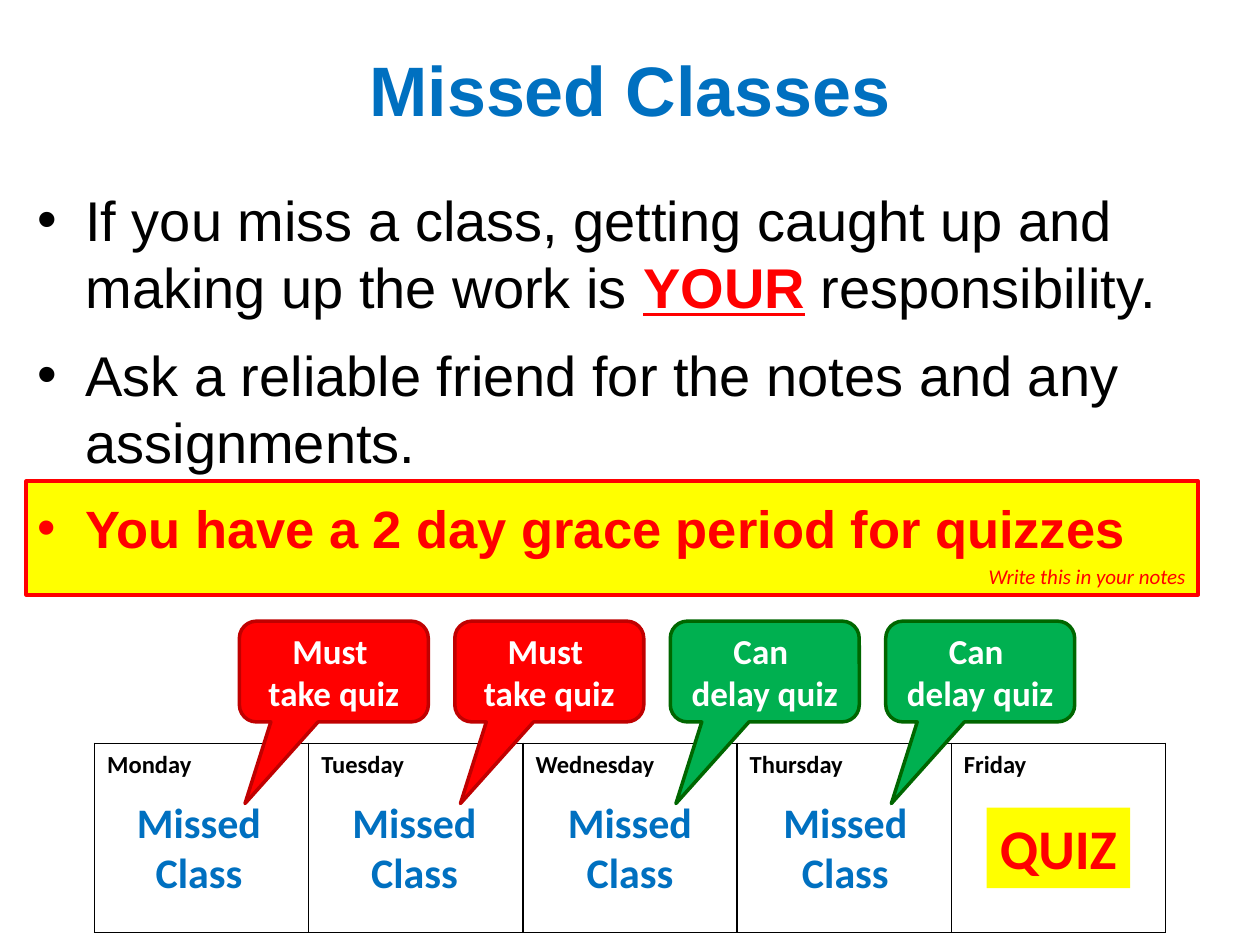
from lxml.etree import SubElement
from pptx import Presentation
from pptx.dml.color import RGBColor
from pptx.enum.shapes import MSO_SHAPE
from pptx.enum.text import MSO_ANCHOR, MSO_AUTO_SIZE, PP_ALIGN
from pptx.oxml import parse_xml
from pptx.oxml.ns import nsdecls, qn
from pptx.util import Inches, Pt

COLORS = {
    "black": "000000", "white": "FFFFFF", "blue": "0070C0", "yellow": "FFFF00",
    "red": "FF0000", "dark red": "C00000", "green": "00B050", "dark green": "006600",
}


def color(name):
    return RGBColor.from_string(COLORS[name])


def add_run(para, text, size, tint, font="Calibri", bold=True):
    span = para.add_run()
    span.text = text
    span.font.name = font
    span.font.size = Pt(size)
    span.font.bold = bold
    span.font.color.rgb = color(tint)
    return span


deck = Presentation()
deck.slide_width, deck.slide_height = Inches(10), Inches(7.5)
page = deck.slides.add_slide(deck.slide_layouts[6])

banner = page.shapes.add_shape(
    MSO_SHAPE.RECTANGLE, Inches(0.21), Inches(3.82), Inches(9.3), Inches(0.9))
banner.shadow.inherit = False
banner.fill.solid()
banner.fill.fore_color.rgb = color("yellow")
banner.line.color.rgb = color("red")
banner.line.width = Pt(2.25)
banner.text_frame.vertical_anchor = MSO_ANCHOR.BOTTOM
para = banner.text_frame.paragraphs[0]
para.alignment = PP_ALIGN.RIGHT
add_run(para, "Write this in your notes", 12, "red", bold=False).font.italic = True

title = page.shapes.add_textbox(Inches(0.2), Inches(0.3), Inches(9.6), Inches(0.8))
title.text_frame.word_wrap = True
title.text_frame.vertical_anchor = MSO_ANCHOR.MIDDLE
para = title.text_frame.paragraphs[0]
para.alignment = PP_ALIGN.CENTER
add_run(para, "Missed Classes", 40, "blue", "Arial")

rules = [
    [("If you miss a class, getting caught up and making up the work is ", 32, "black", False),
     ("YOUR", 32, "red", True),
     (" responsibility.", 32, "black", False)],
    [("Ask a reliable friend for the notes and any assignments.", 32, "black", False)],
    [("You have a 2 day grace period for quizzes", 30, "red", True)],
]
body = page.shapes.add_textbox(Inches(0.2), Inches(1.42), Inches(9.6), Inches(5.78))
body.text_frame.word_wrap = True
for index, rule in enumerate(rules):
    para = body.text_frame.add_paragraph() if index else body.text_frame.paragraphs[0]
    para.space_before = Pt(12)
    properties = para._p.get_or_add_pPr()
    properties.set("marL", str(Inches(0.38)))
    properties.set("indent", str(-Inches(0.38)))
    SubElement(properties, qn("a:buFont")).set("typeface", "Arial")
    SubElement(properties, qn("a:buChar")).set("char", "•")
    for text, size, tint, bold in rule:
        span = add_run(para, text, size, tint, "Arial", bold)
        if text == "YOUR":
            span.font.underline = True

days = ["Monday", "Tuesday", "Wednesday", "Thursday", "Friday"]
week = page.shapes.add_table(
    1, len(days), Inches(0.75), Inches(5.9), Inches(8.5), Inches(1.5)).table
week.first_row = False
week.horz_banding = False
for cell, day in zip(week.rows[0].cells, days):
    add_run(cell.text_frame.paragraphs[0], day, 14, "black")
    cell.fill.background()
    properties = cell._tc.get_or_add_tcPr()
    for position, side in enumerate(["lnL", "lnR", "lnT", "lnB"]):
        properties.insert(position, parse_xml(
            f'<a:{side} {nsdecls("a")} w="{Pt(1)}"><a:solidFill>'
            f'<a:srgbClr val="{COLORS["black"]}"/></a:solidFill></a:{side}>'))

labels = [(0.98 + 1.71 * day, 6.27, 1.2, 0.91, ["Missed", "Class"], 24, "blue")
          for day in range(4)]
labels.append((7.83, 6.41, 1.14, 0.64, ["QUIZ"], 32, "red"))
for left, top, width, height, lines, size, tint in labels:
    box = page.shapes.add_textbox(Inches(left), Inches(top), Inches(width), Inches(height))
    box.text_frame.word_wrap = False
    box.text_frame.auto_size = MSO_AUTO_SIZE.SHAPE_TO_FIT_TEXT
    if lines == ["QUIZ"]:
        box.fill.solid()
        box.fill.fore_color.rgb = color("yellow")
    for index, line in enumerate(lines):
        para = box.text_frame.add_paragraph() if index else box.text_frame.paragraphs[0]
        para.alignment = PP_ALIGN.CENTER
        add_run(para, line, size, tint)

must = (["Must ", "take quiz"], "red", "dark red")
can = (["Can ", "delay quiz"], "green", "dark green")
for day, (lines, fill, outline) in enumerate([must, must, can, can]):
    callout = page.shapes.add_shape(
        MSO_SHAPE.ROUNDED_RECTANGULAR_CALLOUT,
        Inches(1.9 + 1.71 * day), Inches(4.93), Inches(1.5), Inches(0.8))
    for index, value in enumerate([-0.47, 1.31, 0.17]):
        callout.adjustments[index] = value
    callout.shadow.inherit = False
    callout.fill.solid()
    callout.fill.fore_color.rgb = color(fill)
    callout.line.color.rgb = color(outline)
    callout.line.width = Pt(2)
    frame = callout.text_frame
    frame.margin_left = frame.margin_right = frame.margin_top = frame.margin_bottom = 0
    frame.vertical_anchor = MSO_ANCHOR.MIDDLE
    for index, line in enumerate(lines):
        para = frame.add_paragraph() if index else frame.paragraphs[0]
        para.alignment = PP_ALIGN.CENTER
        add_run(para, line, 20, "white")

deck.save("out.pptx")
